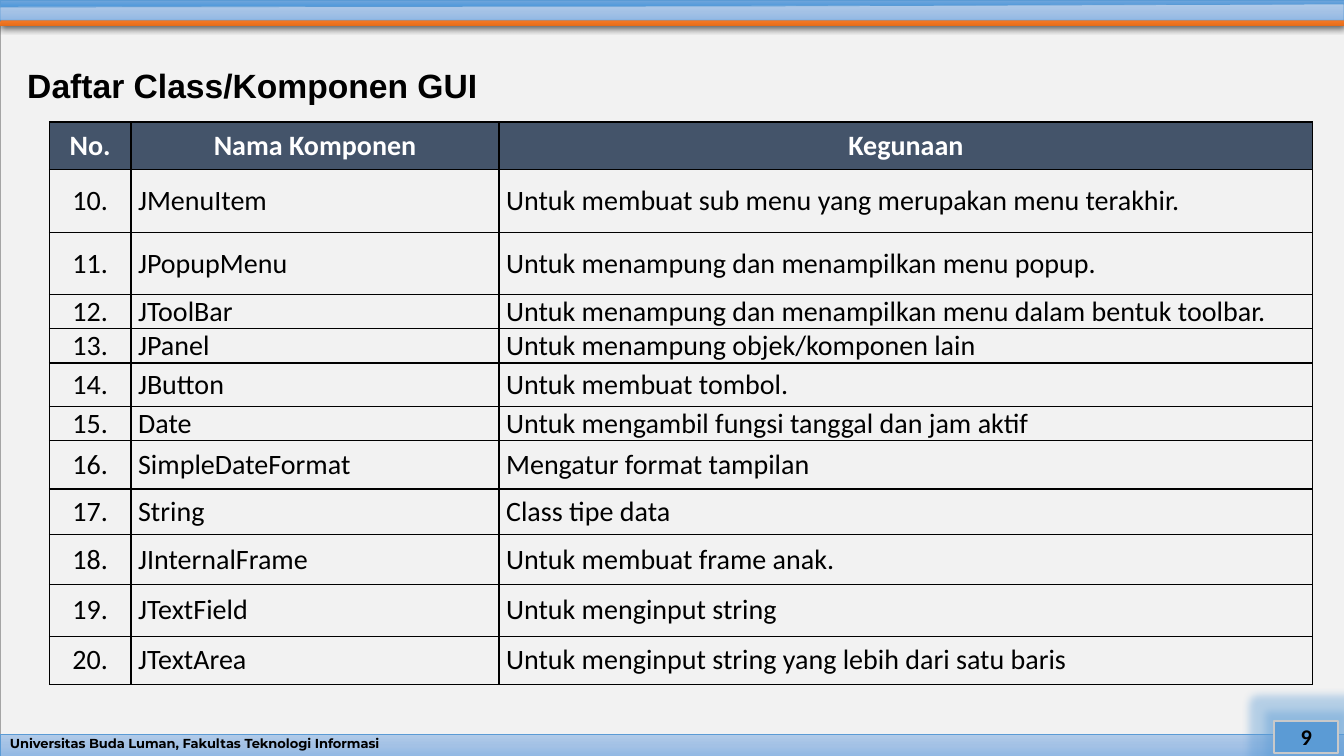
from copy import deepcopy
from dataclasses import dataclass
from typing import Optional

from lxml import etree
from pptx import Presentation
from pptx.dml.color import RGBColor
from pptx.enum import shapes as sh, text as tx
from pptx.oxml import ns
from pptx.util import Inches, Pt

BLACK = RGBColor(0, 0, 0)
WHITE = RGBColor(255, 255, 255)
PAPER = RGBColor(0xF2, 0xF2, 0xF2)
GREY = RGBColor(0xA5, 0xA5, 0xA5)
SILVER = RGBColor(0xC9, 0xC9, 0xC9)
BLUE = RGBColor(0x5B, 0x9B, 0xD5)
NAVY = RGBColor(0x44, 0x54, 0x6A)
ORANGE = (RGBColor(0xF1, 0x8C, 0x57), RGBColor(0xF6, 0x7B, 0x28), RGBColor(0xE5, 0x6C, 0x19))
LIGHT = (RGBColor(0xB1, 0xCB, 0xE9), RGBColor(0xA3, 0xC1, 0xE5), RGBColor(0x93, 0xB9, 0xE4))
DEEP = (RGBColor(0x71, 0xA6, 0xDB), RGBColor(0x55, 0x9B, 0xDB), RGBColor(0x44, 0x8A, 0xCA))

WIDE, HIGH = 13.33, 7.5
LEFT, MID, FULL = tx.PP_ALIGN.LEFT, tx.PP_ALIGN.CENTER, tx.PP_ALIGN.JUSTIFY


@dataclass
class Part:
    name: str
    use: str
    high: float


STRIPE = [(0.03, 0.13), (WIDE, 0.13), (WIDE, 0.26), (0, 0.26)]
RIBBON = [(0, 0.07), (7.5, 0.06), (WIDE, 0.04), (WIDE, 0.2), (0, 0.2)]

HEADS = ["No.", "Nama Komponen", "Kegunaan"]
COLS = [0.81, 3.65, 8.07]
FIRST = 10
PARTS = [
    Part("JMenuItem", "Untuk membuat sub menu yang merupakan menu terakhir.", 0.63),
    Part("JPopupMenu", "Untuk menampung dan menampilkan menu popup.", 0.61),
    Part("JToolBar", "Untuk menampung dan menampilkan menu dalam bentuk toolbar.", 0.33),
    Part("JPanel", "Untuk menampung objek/komponen lain", 0.33),
    Part("JButton", "Untuk membuat tombol.", 0.43),
    Part("Date", "Untuk mengambil fungsi tanggal dan jam aktif", 0.33),
    Part("SimpleDateFormat", "Mengatur format tampilan", 0.48),
    Part("String", "Class tipe data", 0.45),
    Part("JInternalFrame", "Untuk membuat frame anak.", 0.5),
    Part("JTextField", "Untuk menginput string", 0.51),
    Part("JTextArea", "Untuk menginput string yang lebih dari satu baris", 0.48),
]


def put(frame, text: str, size: float = 20, font: str = "Calibri", color: RGBColor = BLACK,
        bold: bool = False, align=LEFT, space: float = 1.0) -> None:
    frame.word_wrap = True
    para = frame.paragraphs[0]
    para.alignment, para.line_spacing = align, space
    run = para.add_run()
    run.text = text
    run.font.size, run.font.name, run.font.bold = Pt(size), font, bold
    run.font.color.rgb = color


def blend(shape, colors: tuple) -> None:
    shape.fill.gradient()
    shape.fill.gradient_angle = 270
    stops = shape._element.spPr.find(".//" + ns.qn("a:gsLst"))
    stops.insert(1, deepcopy(stops[0]))
    for stop, color, spot in zip(shape.fill.gradient_stops, colors, (0, 0.5, 1)):
        stop.color.rgb = color
        stop.position = spot


def style(shape, fill, line: Optional[RGBColor], width: float) -> None:
    shape.shadow.inherit = False
    if isinstance(fill, RGBColor):
        shape.fill.solid()
        shape.fill.fore_color.rgb = fill
    else:
        blend(shape, fill)
    if line is None:
        shape.line.fill.background()
    else:
        shape.line.color.rgb = line
        shape.line.width = Pt(width)


def effect(shape, tag: str, color: RGBColor, alpha: int, **attrs) -> None:
    group = shape._element.spPr.find(ns.qn("a:effectLst"))
    node = etree.SubElement(group, ns.qn(tag), {k: str(v) for k, v in attrs.items()})
    tone = etree.SubElement(node, ns.qn("a:srgbClr"), val=str(color))
    etree.SubElement(tone, ns.qn("a:alpha"), val=str(alpha * 1000))


def box(slide, left: float, top: float, wide: float, high: float,
        fill, line: RGBColor, width: float = 0.5):
    shape = slide.shapes.add_shape(sh.MSO_SHAPE.RECTANGLE, Inches(left), Inches(top),
                                   Inches(wide), Inches(high))
    style(shape, fill, line, width)
    return shape


def band(slide, points: list, fill: tuple, line: Optional[RGBColor] = None):
    start, *rest = [(Inches(x), Inches(y)) for x, y in points]
    outline = slide.shapes.build_freeform(*start)
    outline.add_line_segments(rest, close=True)
    shape = outline.convert_to_shape()
    style(shape, fill, line, 0.5)
    return shape


def frame_cell(cell) -> None:
    props = cell._tc.get_or_add_tcPr()
    for spot, tag in enumerate(("a:lnL", "a:lnR", "a:lnT", "a:lnB")):
        line = etree.Element(ns.qn(tag), w=str(Pt(1)))
        fill = etree.SubElement(line, ns.qn("a:solidFill"))
        etree.SubElement(fill, ns.qn("a:srgbClr"), val=str(BLACK))
        props.insert(spot, line)


def fill_cell(cell, text: str, align, head: bool) -> None:
    cell.vertical_anchor = tx.MSO_ANCHOR.MIDDLE
    cell.margin_left = cell.margin_right = Inches(0.04 if head else 0.07)
    cell.margin_top = cell.margin_bottom = 0
    if head:
        cell.fill.solid()
        cell.fill.fore_color.rgb = NAVY
    else:
        cell.fill.background()
    frame_cell(cell)
    put(cell.text_frame, text, color=WHITE if head else BLACK, bold=head,
        align=MID if head else align)


def draw_table(slide) -> None:
    rows = [HEADS] + [[f"{n}.", p.name, p.use] for n, p in enumerate(PARTS, FIRST)]
    highs = [0.47] + [p.high for p in PARTS]
    table = slide.shapes.add_table(len(rows), len(COLS), Inches(0.49), Inches(1.21),
                                   Inches(sum(COLS)), Inches(sum(highs))).table
    table.horz_banding = False
    for col, wide in zip(table.columns, COLS):
        col.width = Inches(wide)
    for r, (row, high) in enumerate(zip(rows, highs)):
        table.rows[r].height = Inches(high)
        for c, (text, align) in enumerate(zip(row, (MID, LEFT, FULL))):
            fill_cell(table.cell(r, c), text, align, r == 0)


def main() -> None:
    deck = Presentation()
    deck.slide_width, deck.slide_height = Inches(WIDE), Inches(HIGH)
    slide = deck.slides.add_slide(deck.slide_layouts[5])

    box(slide, 0, 0.04, WIDE, 7.46, PAPER, GREY)
    stripe = band(slide, STRIPE, ORANGE)
    effect(stripe, "a:outerShdw", BLACK, 63, blurRad=Pt(4.5), dist=Pt(1.5), dir=5400000)
    box(slide, 0, 7.29, WIDE, 0.21, LIGHT, BLUE)
    box(slide, 0, 0, WIDE, 0.11, DEEP, BLUE)
    band(slide, RIBBON, LIGHT, BLUE)

    foot = slide.shapes.add_textbox(0, Inches(7.29), Inches(WIDE), Inches(0.21))
    foot.text_frame.vertical_anchor = tx.MSO_ANCHOR.MIDDLE
    put(foot.text_frame, "Universitas Buda Luman, Fakultas Teknologi Informasi",
        size=9.3, font="Montserrat", bold=True, space=0.7)

    page = box(slide, 12.64, 7.15, 0.63, 0.32, BLUE, SILVER, 1.5)
    effect(page, "a:glow", BLUE, 40, rad=Inches(0.17))
    page.text_frame.vertical_anchor = tx.MSO_ANCHOR.MIDDLE
    put(page.text_frame, "9", size=16, bold=True, align=MID)

    title = slide.shapes.title
    slide.shapes._spTree.append(title._element)
    title.left, title.top = Inches(0.17), Inches(0.53)
    title.width, title.height = Inches(12.85), Inches(0.68)
    title.text_frame.vertical_anchor = tx.MSO_ANCHOR.MIDDLE
    put(title.text_frame, "Daftar Class/Komponen GUI", size=24, font="Arial",
        bold=True, space=0.9)

    draw_table(slide)
    deck.save("out.pptx")


if __name__ == "__main__":
    main()
